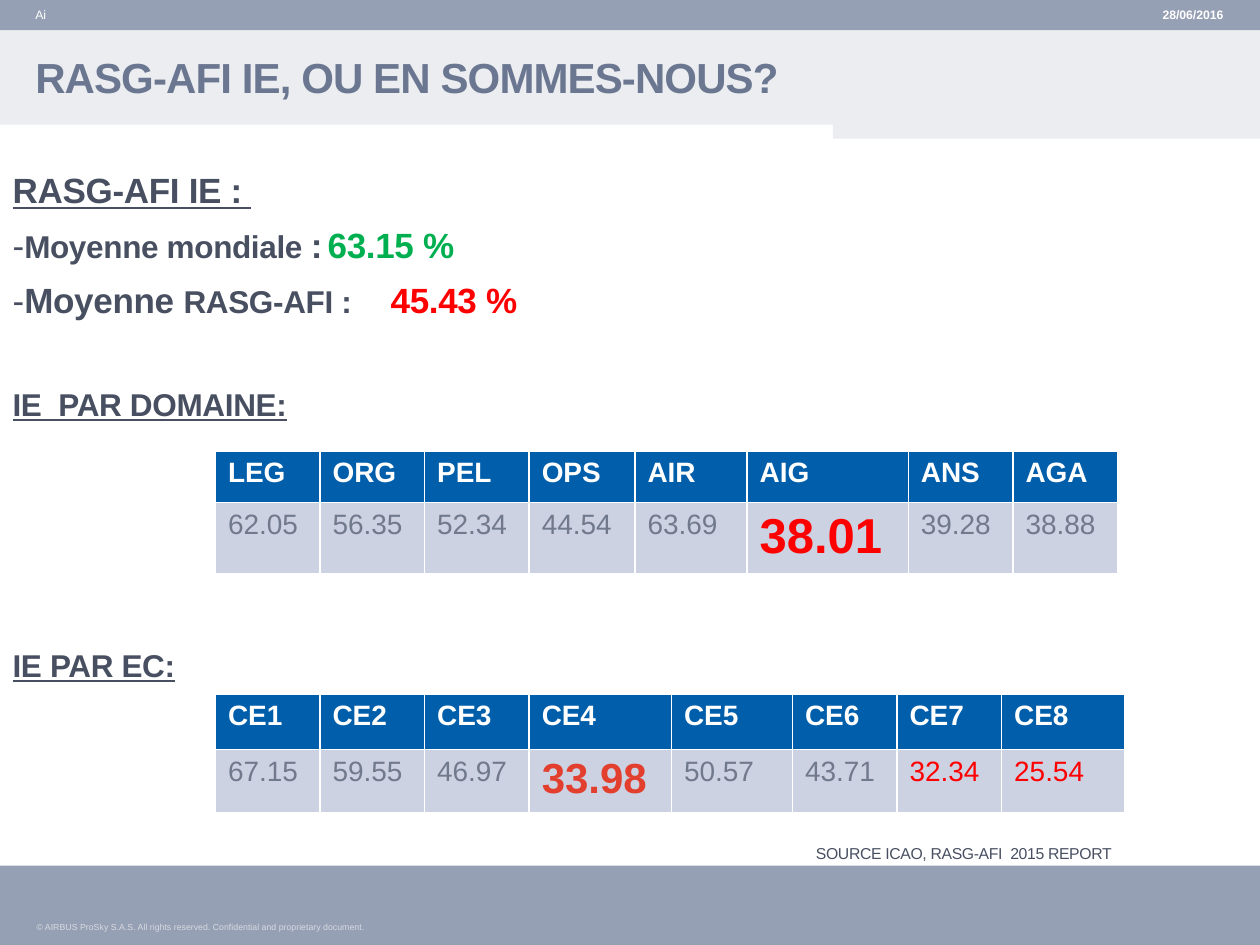
from lxml import etree
from pptx import Presentation
from pptx.dml.color import RGBColor
from pptx.enum import shapes, text
from pptx.oxml.ns import qn
from pptx.util import Inches, Pt

SLATE, DARK, GREY, RED, WHITE = "96A0B4", "474F61", "71798C", "FF0000", "FFFFFF"


def paint(target, color):
    """Fill a shape or cell, or colour a font."""
    if hasattr(target, "fill") and not hasattr(target, "bold"):
        target.fill.solid()
        target.fill.fore_color.rgb = RGBColor.from_string(color)
    else:
        target.color.rgb = RGBColor.from_string(color)


def add_run(paragraph, content, size, color, spacing=0, **font_format):
    run = paragraph.add_run()
    run.text = content
    run.font.size = Pt(size)
    run.font.name = "Arial"
    paint(run.font, color)
    for name, value in font_format.items():
        setattr(run.font, name, value)
    if spacing:
        run._r.get_or_add_rPr().set("spc", str(int(spacing * 100)))


presentation = Presentation()
presentation.slide_width = Inches(10)
presentation.slide_height = Inches(7.5)
slide = presentation.slides.add_slide(presentation.slide_layouts[1])
title, body = slide.placeholders

# Background bands
builder = slide.shapes.build_freeform(0, Inches(0.24))
builder.add_line_segments(
    [(Inches(x), Inches(y)) for x, y in
     [(10, 0.24), (10, 1.1), (6.61, 1.1), (6.61, 0.99), (0, 0.99)]])
bands = [(builder.convert_to_shape(), "EBEDF0")]
for top, height in [(6.87, 0.63), (0, 0.24)]:
    band = slide.shapes.add_shape(
        shapes.MSO_SHAPE.RECTANGLE, 0, Inches(top), Inches(10), Inches(height))
    bands.append((band, SLATE))
for shape, color in bands:
    paint(shape, color)
    shape.line.fill.background()
    shape.shadow.inherit = False

# Title and body sit above the bands
for placeholder, box, inset in [(title, (0.28, 0.31, 9.45, 0.67), 0),
                                (body, (0.1, 1.24, 9.78, 5.2), 0.1)]:
    slide.shapes._spTree.append(placeholder._element)
    placeholder.left, placeholder.top, placeholder.width, placeholder.height = map(Inches, box)
    frame = placeholder.text_frame
    frame.auto_size = text.MSO_AUTO_SIZE.NONE
    frame.word_wrap = True
    frame.margin_left = 0
    frame.margin_top = frame.margin_right = frame.margin_bottom = Inches(inset)

title.text_frame.vertical_anchor = text.MSO_ANCHOR.MIDDLE
heading = title.text_frame.paragraphs[0]
heading.alignment = text.PP_ALIGN.LEFT
heading.line_spacing = 0.8
add_run(heading, "RASG-AFI IE, OU EN SOMMES-NOUS?", 24, "6B7791", -0.5, bold=True)

bold = {"bold": True}
plain = {"bold": False}
underlined = {"bold": True, "underline": True}
# Space before, tab stop, runs
body_lines = [
    (0, None, [("RASG-AFI IE : ", 20, DARK, underlined)]),
    (7.3, 3.06, [("-", 20, DARK, plain), ("Moyenne mondiale ", 18, DARK, bold),
                 (":\t", 20, DARK, bold), ("63.15 %", 20, "00B050", bold)]),
    (7.3, 3.03, [("-", 20, DARK, plain), ("Moyenne ", 20, DARK, bold),
                 ("RASG-AFI :\t", 18, DARK, bold), ("45.43 %", 20, RED, bold)]),
    (37, None, [("IE  PAR DOMAINE:", 18, DARK, underlined)]),
    (127.3, 1.63, [("IE PAR EC:\t", 18, DARK, underlined)]),
]
for index, (space, tab, runs) in enumerate(body_lines):
    frame = body.text_frame
    paragraph = frame.add_paragraph() if index else frame.paragraphs[0]
    paragraph.space_before = Pt(space)
    properties = paragraph._p.get_or_add_pPr()
    properties.set("marL", "0")
    properties.set("indent", "0")
    etree.SubElement(properties, qn("a:buNone"))
    if tab:
        tabs = etree.SubElement(properties, qn("a:tabLst"))
        etree.SubElement(tabs, qn("a:tab"), pos=str(Inches(tab)), algn="l")
    for content, size, color, font_format in runs:
        add_run(paragraph, content, size, color, -0.2, **font_format)

# Header, footer and source texts
labels = [
    ("28/06/2016", (8.37, 0, 1.34, 0.24), 7, WHITE, 0, True, text.PP_ALIGN.RIGHT),
    ("Ai", (0.28, 0, 7.95, 0.24), 7, WHITE, 0, False, text.PP_ALIGN.LEFT),
    ("© AIRBUS ProSky S.A.S. All rights reserved. Confidential and proprietary document.",
     (0.29, 7.3, 3.34, 0.12), 5, "D7DAE1", 0, False, text.PP_ALIGN.LEFT),
    ("SOURCE ICAO, RASG-AFI  2015 REPORT",
     (5.82, 6.67, 3, 0.2), 9, DARK, -0.2, False, text.PP_ALIGN.RIGHT),
]
for content, box, size, color, spacing, is_bold, alignment in labels:
    frame = slide.shapes.add_textbox(*map(Inches, box)).text_frame
    frame.word_wrap = True
    frame.vertical_anchor = text.MSO_ANCHOR.MIDDLE
    frame.margin_left = frame.margin_top = frame.margin_right = frame.margin_bottom = 0
    frame.paragraphs[0].alignment = alignment
    add_run(frame.paragraphs[0], content, size, color, spacing, bold=is_bold)

# Tables: top, row heights, special column widths, headers, values, highlights
tables = [
    (5.51, (0.44, 0.48), {3: 1.13, 4: 0.96, 7: 0.98},
     ["CE1", "CE2", "CE3", "CE4", "CE5", "CE6", "CE7", "CE8"],
     ["67.15", "59.55", "46.97", "33.98", "50.57", "43.71", "32.34", "25.54"],
     {3: (24, "E23F2E", True), 6: (16, RED, False), 7: (16, RED, False)}),
    (3.58, (0.41, 0.54), {3: 0.84, 4: 0.89, 5: 1.28},
     ["LEG", "ORG", "PEL", "OPS", "AIR", "AIG", "ANS", "AGA"],
     ["62.05", "56.35", "52.34", "44.54", "63.69", "38.01", "39.28", "38.88"],
     {5: (28, RED, True)}),
]
for top, heights, special_widths, headers, values, highlights in tables:
    widths = [special_widths.get(column, 0.83) for column in range(len(headers))]
    table = slide.shapes.add_table(
        2, len(headers), Inches(1.71), Inches(top),
        Inches(sum(widths)), Inches(sum(heights))).table
    table.horz_banding = False
    for row, height in zip(table.rows, heights):
        row.height = Inches(height)
    for column, width in enumerate(widths):
        table.columns[column].width = Inches(width)
        size, color, is_bold = highlights.get(column, (16, GREY, False))
        header, value = table.cell(0, column), table.cell(1, column)
        paint(header, "005EAB")
        paint(value, "CCD2E2")
        add_run(header.text_frame.paragraphs[0], headers[column], 16, WHITE, bold=True)
        add_run(value.text_frame.paragraphs[0], values[column], size, color, bold=is_bold)

presentation.save("out.pptx")
